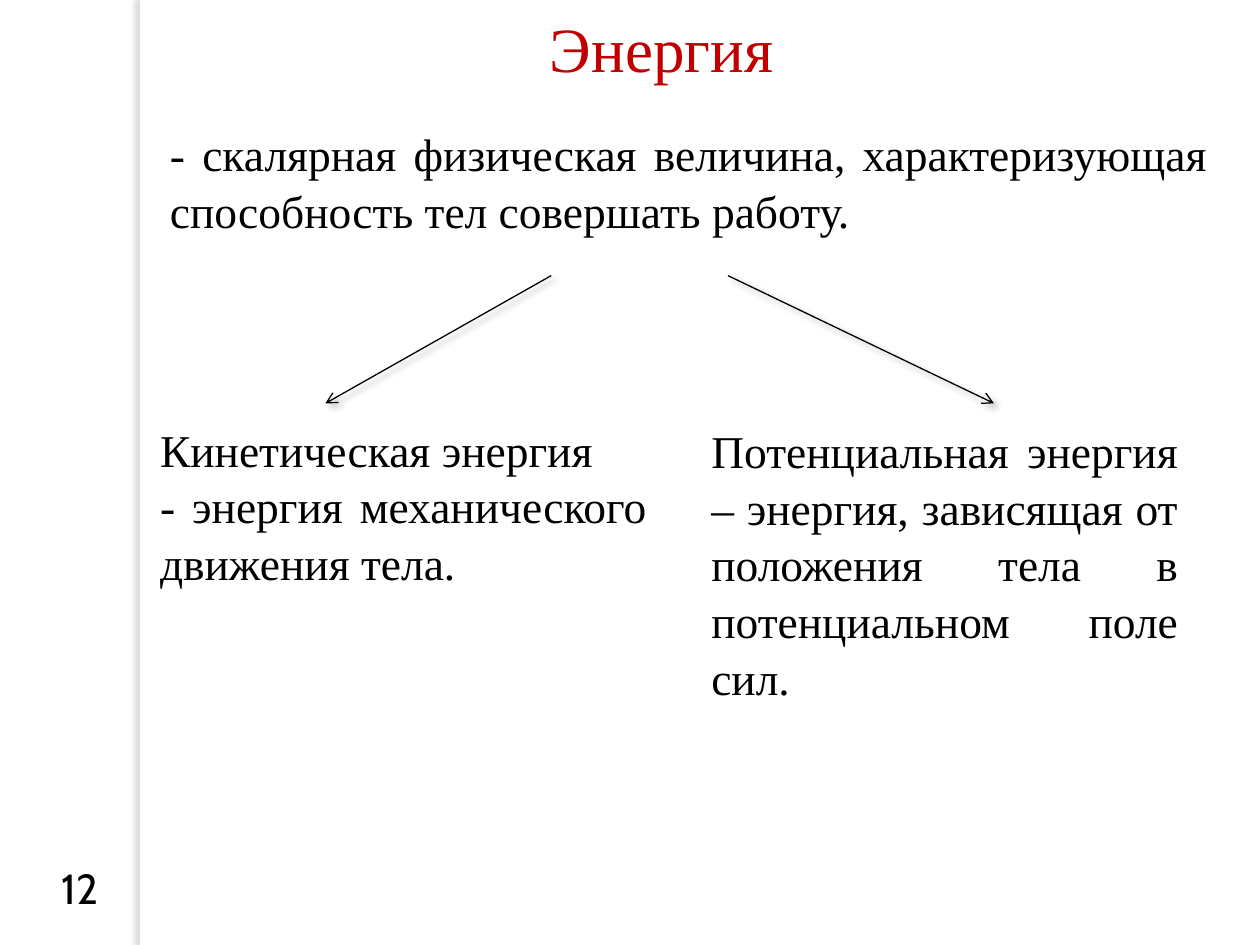
from dataclasses import dataclass

from lxml import etree
from pptx import Presentation
from pptx.dml.color import RGBColor
from pptx.enum import shapes, text
from pptx.oxml import ns
from pptx.util import Pt


@dataclass(frozen=True)
class Theme:
    serif: str = "Times New Roman"
    sans: str = "Cabin"
    ink: str = "000000"
    accent: str = "C00000"
    paper: str = "FFFFFF"
    edge: str = "736F63"
    title: float = 36
    number: float = 24
    body: float = 26
    body_spacing: float = 1.04
    line: float = 0.75


@dataclass(frozen=True)
class Shadow:
    color: str
    opacity: int
    blur: float
    distance: float
    angle: int


@dataclass(frozen=True)
class Box:
    left: float
    top: float
    width: float
    height: float


@dataclass(frozen=True)
class Definition:
    box: Box
    paragraphs: tuple[str, ...]


@dataclass(frozen=True)
class Branch:
    start: tuple[float, float]
    end: tuple[float, float]


THEME = Theme()
EDGE_SHADOW = Shadow(THEME.edge, 25, 3, 3, 180)
ARROW_SHADOW = Shadow(THEME.ink, 40, 4, 3, 45)

BRANCH_TOP, BRANCH_BOTTOM = 157.5, 230.5
BRANCHES = (
    Branch((315, BRANCH_TOP), (186, BRANCH_BOTTOM)),
    Branch((416, BRANCH_TOP), (568, BRANCH_BOTTOM)),
)
DEFINITIONS = (
    Definition(Box(90, 67.5, 607.5, 70.5),
               ("- скалярная физическая величина, характеризующая "
                "способность тел совершать работу. ",)),
    Definition(Box(84.4, 236.2, 292.5, 101.5),
               ("Кинетическая энергия",
                "- энергия механического движения тела. ")),
    Definition(Box(399.4, 236.9, 281.2, 165),
               ("Потенциальная энергия – энергия, зависящая от "
                "положения тела в потенциальном поле сил. ",)),
)


def add_shadow(sp, shadow: Shadow) -> None:
    """Give a shape or connector an outer shadow in place of the theme's."""
    pr = sp._element.spPr
    for old in pr.findall(ns.qn("a:effectLst")):
        pr.remove(old)
    effects = etree.SubElement(pr, ns.qn("a:effectLst"))
    outer = etree.SubElement(
        effects, ns.qn("a:outerShdw"), blurRad=str(Pt(shadow.blur)),
        dist=str(Pt(shadow.distance)), dir=str(shadow.angle * 60000),
        rotWithShape="0")
    color = etree.SubElement(outer, ns.qn("a:srgbClr"), val=shadow.color)
    etree.SubElement(color, ns.qn("a:alpha"), val=str(shadow.opacity * 1000))


def add_edge(slide, box: Box) -> None:
    sp = slide.shapes.add_shape(
        shapes.MSO_SHAPE.RECTANGLE, Pt(box.left), Pt(box.top),
        Pt(box.width), Pt(box.height))
    sp.fill.solid()
    sp.fill.fore_color.rgb = RGBColor.from_string(THEME.paper)
    sp.line.fill.background()
    add_shadow(sp, EDGE_SHADOW)


def add_text(slide, box: Box, paragraphs: tuple[str, ...], size: float,
             align: text.PP_ALIGN, font: str = THEME.serif,
             color: str = THEME.ink, spacing: float = 1.0,
             anchor: text.MSO_ANCHOR = text.MSO_ANCHOR.TOP,
             wrap: bool = True) -> None:
    sp = slide.shapes.add_textbox(
        Pt(box.left), Pt(box.top), Pt(box.width), Pt(box.height))
    tf = sp.text_frame
    tf.word_wrap = wrap
    tf.vertical_anchor = anchor
    tf.text = "\n".join(paragraphs)
    for p in tf.paragraphs:
        p.alignment = align
        p.line_spacing = spacing
        p.font.name = font
        p.font.size = Pt(size)
        p.font.color.rgb = RGBColor.from_string(color)


def add_arrow(slide, branch: Branch) -> None:
    line = slide.shapes.add_connector(
        shapes.MSO_CONNECTOR.STRAIGHT,
        *(Pt(v) for v in branch.start + branch.end))
    line.line.color.rgb = RGBColor.from_string(THEME.ink)
    line.line.width = Pt(THEME.line)
    etree.SubElement(line.line._get_or_add_ln(), ns.qn("a:tailEnd"),
                     type="arrow")
    add_shadow(line, ARROW_SHADOW)


def main() -> None:
    prs = Presentation()
    prs.slide_width, prs.slide_height = Pt(720), Pt(540)
    slide = prs.slides.add_slide(prs.slide_layouts[6])

    add_edge(slide, Box(80, 0, 5.75, 540))
    add_text(slide, Box(28, 489.6, 37.5, 36), ("12",), THEME.number,
             text.PP_ALIGN.LEFT, font=THEME.sans, wrap=False)
    add_text(slide, Box(67.5, 0, 630, 54), ("Энергия ",), THEME.title,
             text.PP_ALIGN.CENTER, color=THEME.accent,
             anchor=text.MSO_ANCHOR.MIDDLE)
    for branch in BRANCHES:
        add_arrow(slide, branch)
    for item in DEFINITIONS:
        add_text(slide, item.box, item.paragraphs, THEME.body,
                 text.PP_ALIGN.JUSTIFY, spacing=THEME.body_spacing)
    prs.save("out.pptx")


if __name__ == "__main__":
    main()
